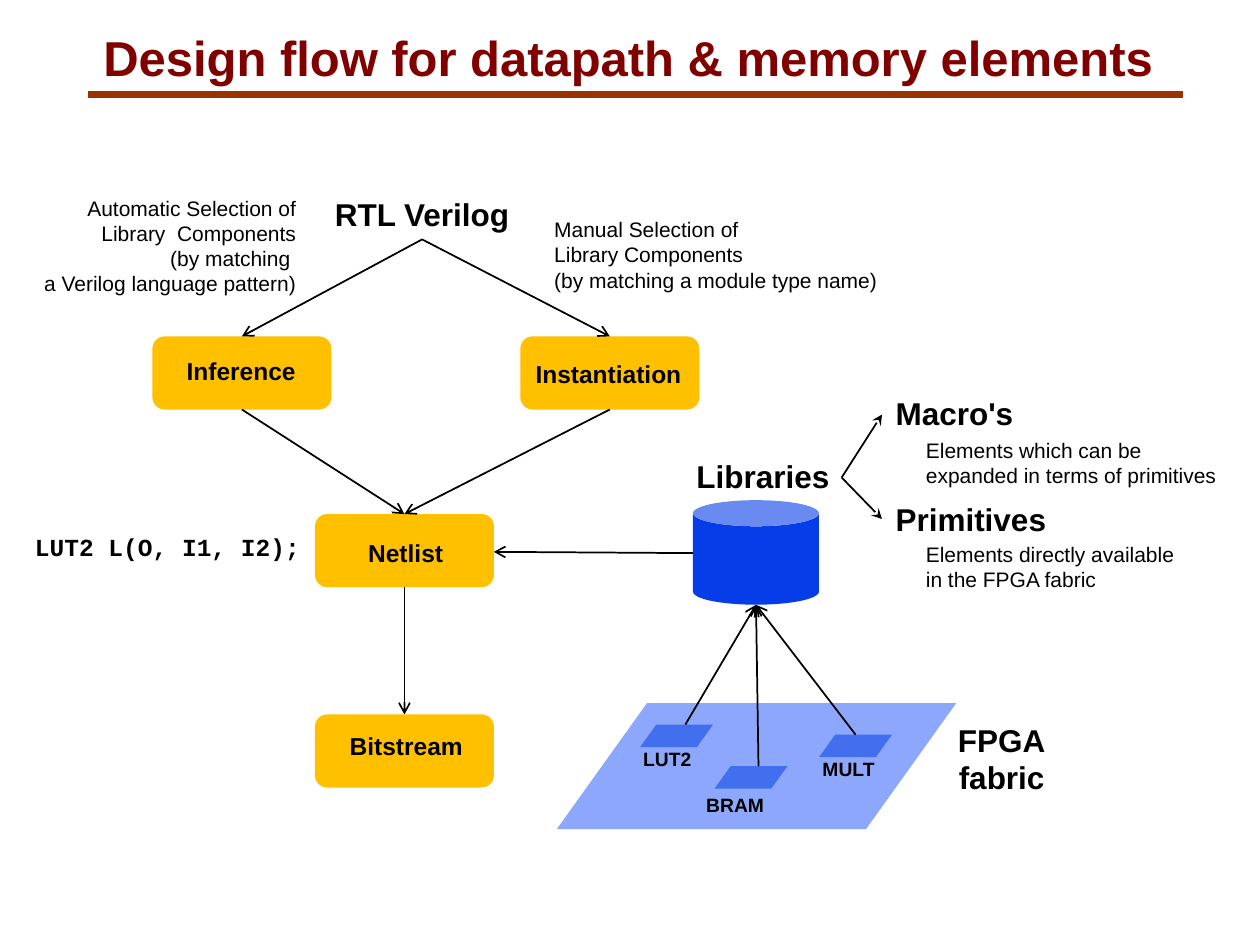
import pptx
import pptx.util
import pptx.dml.color
import pptx.enum.shapes
import pptx.enum.text
import pptx.oxml.ns
import lxml.etree
from typing import NamedTuple

Inches = pptx.util.Inches
Pt = pptx.util.Pt
RGB = pptx.dml.color.RGBColor
Kind = pptx.enum.shapes.MSO_SHAPE
Align = pptx.enum.text.PP_ALIGN
Fit = pptx.enum.text.MSO_AUTO_SIZE
Anchor = pptx.enum.text.MSO_ANCHOR
qn = pptx.oxml.ns.qn

BLACK = RGB(0x00, 0x00, 0x00)
MAROON = RGB(0x80, 0x00, 0x00)
RUST = RGB(0x99, 0x33, 0x00)
AMBER = RGB(0xFF, 0xC0, 0x00)
BLUE = RGB(0x06, 0x3D, 0xE8)
PALE = RGB(0x8C, 0xA7, 0xFC)
MID = RGB(0x41, 0x6F, 0xEE)

# Font styles
BASE = {"name": "Arial", "bold": True, "color": BLACK}
HEAD = {**BASE, "size": Pt(18)}
STEP = {**BASE, "size": Pt(14)}
PART = {**BASE, "size": Pt(11)}
NOTE = {**BASE, "size": Pt(12), "bold": False}
CODE = {**STEP, "name": "Courier New"}
TITLE = {**BASE, "size": Pt(28), "color": MAROON}


class Box(NamedTuple):
    left: float
    top: float
    width: float
    height: float


class Label(NamedTuple):
    box: Box
    style: dict
    lines: list[str]
    align: Align = Align.CENTER


class Arrow(NamedTuple):
    start: tuple[float, float]
    end: tuple[float, float]
    tip: str = "arrow"


class Node(NamedTuple):
    left: float
    top: float
    label: Label


STAGE_W, STAGE_H = 1.42, 0.58
CELL_W, CELL_H = 0.58, 0.18
SLANT = 0.716

STAGES = [
    Node(1.21, 2.67, Label(Box(1.38, 2.78, 1.07, 0.34), STEP, ["Inference"])),
    Node(4.13, 2.67, Label(Box(4.15, 2.8, 1.36, 0.34), STEP, ["Instantiation"])),
    Node(2.5, 4.08, Label(Box(2.82, 4.22, 0.8, 0.34), STEP, ["Netlist"])),
    Node(2.5, 5.67, Label(Box(2.67, 5.75, 1.11, 0.34), STEP, ["Bitstream"])),
]

CELLS = [
    Node(5.08, 5.75, Label(Box(5, 5.88, 0.59, 0.29), PART, ["LUT2"])),
    Node(5.67, 6.08, Label(Box(5.5, 6.25, 0.67, 0.29), PART, ["BRAM"])),
    Node(6.5, 5.83, Label(Box(6.42, 5.96, 0.63, 0.29), PART, ["MULT"])),
]

LABELS = [
    Label(Box(2.55, 1.5, 1.6, 0.4), HEAD, ["RTL Verilog"]),
    Label(Box(5.42, 3.58, 1.27, 0.4), HEAD, ["Libraries"]),
    Label(Box(7.5, 5.67, 0.9, 0.71), HEAD, ["FPGA", "fabric"]),
    Label(Box(7, 3.08, 1.15, 0.4), HEAD, ["Macro's"]),
    Label(Box(7, 3.92, 1.41, 0.4), HEAD, ["Primitives"]),
    Label(Box(0.17, 4.17, 2.32, 0.34), CODE, ["LUT2 L(O, I1, I2);"]),
    Label(Box(0.24, 1.5, 2.21, 0.91), NOTE,
          ["Automatic Selection of", "Library  Components",
           "(by matching \va Verilog language pattern)"], Align.RIGHT),
    Label(Box(4.3, 1.67, 2.79, 0.71), NOTE,
          ["Manual Selection of", "Library Components",
           "(by matching a module type name)"], Align.LEFT),
    Label(Box(7.25, 3.42, 2.52, 0.5), NOTE,
          ["Elements which can be\vexpanded in terms of primitives"], Align.LEFT),
    Label(Box(7.25, 4.25, 2.24, 0.5), NOTE,
          ["Elements directly available", "in the FPGA fabric"], Align.LEFT),
]

# Points where arrows meet
RTL, STORE, FORK = (3.35, 1.9), (6, 4.8), (6.68, 3.79)
INFER, INST, NET, BITS = [(s.left + STAGE_W / 2, s.top) for s in STAGES]

ARROWS = [
    Arrow(RTL, INFER),
    Arrow(RTL, INST),
    Arrow((INFER[0], INFER[1] + STAGE_H), NET),
    Arrow((INST[0], INST[1] + STAGE_H), NET),
    Arrow((NET[0], NET[1] + STAGE_H), BITS),
    Arrow((5.5, 4.39), (3.92, 4.38)),
    Arrow(FORK, (7, 3.29), "stealth"),
    Arrow(FORK, (7, 4.12), "stealth"),
] + [Arrow((x, c.top), STORE) for c, x in zip(CELLS, (5.44, 6.02, 6.79))]


def write(frame, lines: list[str], style: dict, align: Align) -> None:
    frame.word_wrap = False
    frame.auto_size = Fit.SHAPE_TO_FIT_TEXT
    for i, line in enumerate(lines):
        para = frame.paragraphs[0] if i == 0 else frame.add_paragraph()
        para.text = line
        para.alignment = align
        for run in para.runs:
            for key, value in style.items():
                if key == "color":
                    run.font.color.rgb = value
                else:
                    setattr(run.font, key, value)


def add_label(slide, label: Label) -> None:
    area = slide.shapes.add_textbox(*map(Inches, label.box))
    write(area.text_frame, label.lines, label.style, label.align)


def add_block(slide, kind: Kind, box: Box, fill: RGB) -> None:
    block = slide.shapes.add_shape(kind, *map(Inches, box))
    block.shadow.inherit = False
    block.fill.solid()
    block.fill.fore_color.rgb = fill
    block.line.fill.background()
    if kind == Kind.PARALLELOGRAM:
        block.adjustments[0] = SLANT


def add_line(slide, start, end, color: RGB = BLACK, width: float = 1, tip: str = "") -> None:
    line = slide.shapes.add_connector(
        pptx.enum.shapes.MSO_CONNECTOR.STRAIGHT, *map(Inches, (*start, *end)))
    line.line.color.rgb = color
    line.line.width = Pt(width)
    props = line.element.find(qn("p:spPr"))
    if tip:
        lxml.etree.SubElement(props.find(qn("a:ln")), qn("a:tailEnd"), type=tip)
    lxml.etree.SubElement(props, qn("a:effectLst"))


def add_title(slide, text: str) -> None:
    title = slide.shapes.title
    place = {"left": 0.75, "top": 0.25, "width": 8.57, "height": 0.47}
    for key, value in place.items():
        setattr(title, key, Inches(value))
    frame = title.text_frame
    insets = {"margin_left": 0.07, "margin_right": 0.07,
              "margin_top": 0.03, "margin_bottom": 0.03}
    for key, value in insets.items():
        setattr(frame, key, Inches(value))
    frame.vertical_anchor = Anchor.TOP
    write(frame, [text], TITLE, Align.LEFT)
    frame.paragraphs[0].line_spacing = 0.87


def main() -> None:
    deck = pptx.Presentation()
    deck.slide_width, deck.slide_height = Inches(10), Inches(7.5)
    slide = deck.slides.add_slide(deck.slide_layouts[5])

    # Title and rule
    add_title(slide, "Design flow for datapath & memory elements")
    add_line(slide, (0.7, 0.75), (9.39, 0.75), RUST, 4.5)

    # Library store and fabric
    add_block(slide, Kind.CAN, Box(5.5, 3.97, 1, 0.83), BLUE)
    add_block(slide, Kind.PARALLELOGRAM, Box(4.42, 5.58, 3.17, 1), PALE)
    for cell in CELLS:
        add_block(slide, Kind.PARALLELOGRAM, Box(cell.left, cell.top, CELL_W, CELL_H), MID)
        add_label(slide, cell.label)

    # Flow stages
    for stage in STAGES:
        add_block(slide, Kind.ROUNDED_RECTANGLE,
                  Box(stage.left, stage.top, STAGE_W, STAGE_H), AMBER)
        add_label(slide, stage.label)

    # Headings, notes and arrows
    for label in LABELS:
        add_label(slide, label)
    for arrow in ARROWS:
        add_line(slide, arrow.start, arrow.end, tip=arrow.tip)

    deck.save("out.pptx")


if __name__ == "__main__":
    main()
